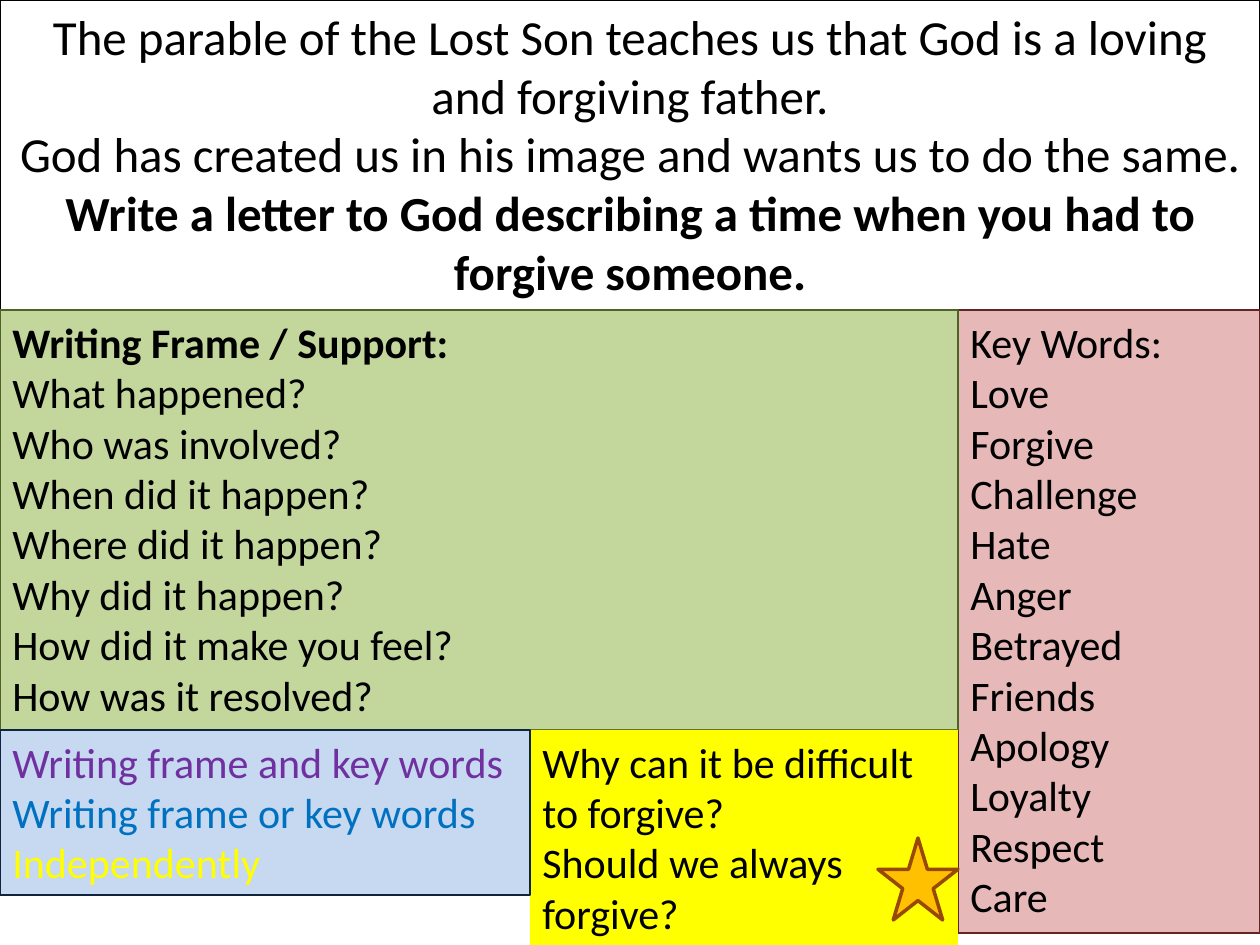
from pptx import Presentation
from pptx.dml.color import RGBColor
from pptx.enum.shapes import MSO_SHAPE
from pptx.enum.text import MSO_ANCHOR, MSO_AUTO_SIZE, PP_ALIGN
from pptx.util import Pt

STAR = MSO_SHAPE.STAR_5_POINT
TOP = MSO_ANCHOR.TOP
FIT_SHAPE = MSO_AUTO_SIZE.SHAPE_TO_FIT_TEXT
LEFT, CENTER = PP_ALIGN.LEFT, PP_ALIGN.CENTER

BLACK = RGBColor(0x00, 0x00, 0x00)
YELLOW = RGBColor(0xFF, 0xFF, 0x00)
PURPLE = RGBColor(0x70, 0x30, 0xA0)
BLUE = RGBColor(0x00, 0x70, 0xC0)
PINK = RGBColor(0xE6, 0xB9, 0xB8)
DARK_RED = RGBColor(0x63, 0x25, 0x23)
GREEN = RGBColor(0xC3, 0xD6, 0x9B)
DARK_GREEN = RGBColor(0x4F, 0x62, 0x28)
PALE_BLUE = RGBColor(0xC6, 0xD9, 0xF1)
NAVY = RGBColor(0x0F, 0x24, 0x3E)
GOLD = RGBColor(0xFF, 0xC0, 0x00)
BROWN = RGBColor(0x98, 0x48, 0x07)

FONT = "Calibri"
PX = 914400 / 126
WIDTH, HEIGHT = 1260, 945
TASK_BOTTOM, FRAME_BOTTOM = 310, 730
LEVELS_RIGHT, FRAME_RIGHT = 530, 958

TASK = [
    "The parable of the Lost Son teaches us that God is a loving and forgiving father.",
    "God has created us in his image and wants us to do the same.",
    "Write a letter to God describing a time when you had to forgive someone.",
]
KEY_WORDS = ["Key Words:", "Love", "Forgive", "Challenge", "Hate", "Anger", "Betrayed",
             "Friends", "Apology", "Loyalty", "Respect", "Care"]
FRAME = ["Writing Frame / Support:", "What happened?", "Who was involved?",
         "When did it happen?", "Where did it happen?", "Why did it happen?",
         "How did it make you feel?", "How was it resolved?"]
QUESTIONS = ["Why can it be difficult to forgive?", "Should we always forgive?"]
LEVELS = ["Writing frame and key words", "Writing frame or key words", "Independently"]
LEVEL_COLOURS = [PURPLE, BLUE, YELLOW]


def place(left, top, right, bottom):
    return [round(value * PX) for value in (left, top, right - left, bottom - top)]


def add_panel(slide, edges, lines, fill=None, outline=None, size=24,
              align=LEFT, bold_line=None, colours=None):
    box = slide.shapes.add_textbox(*place(*edges))
    if fill is not None:
        box.fill.solid()
        box.fill.fore_color.rgb = fill
    if outline is not None:
        box.line.color.rgb = outline
        box.line.width = Pt(0.75)
    frame = box.text_frame
    frame.word_wrap = True
    frame.auto_size = FIT_SHAPE
    frame.vertical_anchor = TOP
    frame.text = "\n".join(lines)
    for index, para in enumerate(frame.paragraphs):
        para.alignment = align
        para.font.name = FONT
        para.font.size = Pt(size)
        para.font.bold = index == bold_line
        para.font.color.rgb = colours[index] if colours else BLACK


def add_star(slide, edges):
    star = slide.shapes.add_shape(STAR, *place(*edges))
    star.shadow.inherit = False
    star.fill.solid()
    star.fill.fore_color.rgb = GOLD
    star.line.color.rgb = BROWN
    star.line.width = Pt(2)


def main():
    deck = Presentation()
    deck.slide_width, deck.slide_height = round(WIDTH * PX), round(HEIGHT * PX)
    slide = deck.slides.add_slide(deck.slide_layouts[6])
    add_panel(slide, (0, 0, WIDTH, TASK_BOTTOM), TASK, outline=BLACK,
              size=28, align=CENTER, bold_line=2)
    add_panel(slide, (FRAME_RIGHT, TASK_BOTTOM, WIDTH, 933), KEY_WORDS, PINK, DARK_RED)
    add_panel(slide, (0, TASK_BOTTOM, FRAME_RIGHT, FRAME_BOTTOM), FRAME,
              GREEN, DARK_GREEN, bold_line=0)
    add_panel(slide, (LEVELS_RIGHT, FRAME_BOTTOM, FRAME_RIGHT, 946), QUESTIONS, YELLOW)
    add_star(slide, (878, 838, FRAME_RIGHT, 920))
    add_panel(slide, (0, FRAME_BOTTOM, LEVELS_RIGHT, 895), LEVELS,
              PALE_BLUE, NAVY, colours=LEVEL_COLOURS)
    deck.save("out.pptx")


if __name__ == "__main__":
    main()
